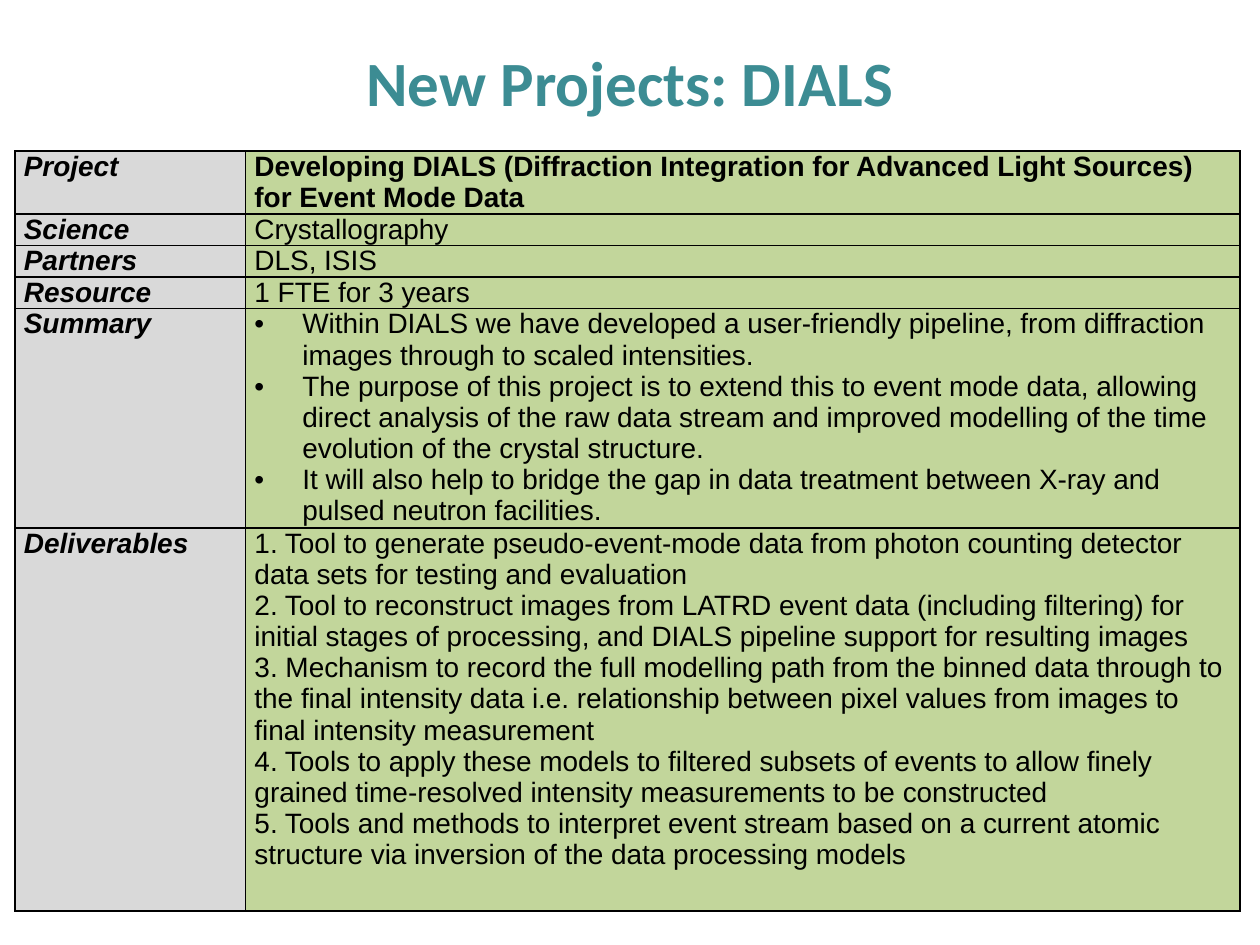
from lxml.etree import SubElement
from pptx import Presentation
from pptx.dml.color import RGBColor
from pptx.enum.text import MSO_ANCHOR, PP_ALIGN
from pptx.oxml.ns import qn
from pptx.util import Inches, Pt

COLORS = {"title": "3C8C93", "label": "D9D9D9", "value": "C2D69B", "ink": "000000"}
COLS = [1.83, 7.89]
ROWS = [
    ("Project", 0.5, ["Developing DIALS (Diffraction Integration for Advanced Light Sources) for Event Mode Data"]),
    ("Science", 0.25, ["Crystallography"]),
    ("Partners", 0.25, ["DLS, ISIS"]),
    ("Resource", 0.25, ["1 FTE for 3 years"]),
    ("Summary", 1.74, [
        "Within DIALS we have developed a user-friendly pipeline, from diffraction images through to scaled intensities.",
        "The purpose of this project is to extend this to event mode data, allowing direct analysis of the raw data stream and improved modelling of the time evolution of the crystal structure.",
        "It will also help to bridge the gap in data treatment between X-ray and pulsed neutron facilities.",
    ]),
    ("Deliverables", 3.04, [
        "1. Tool to generate pseudo-event-mode data from photon counting detector data sets for testing and evaluation",
        "2. Tool to reconstruct images from LATRD event data (including filtering) for initial stages of processing, and DIALS pipeline support for resulting images",
        "3. Mechanism to record the full modelling path from the binned data through to the final intensity data i.e. relationship between pixel values from images to final intensity measurement",
        "4. Tools to apply these models to filtered subsets of events to allow finely grained time-resolved intensity measurements to be constructed",
        "5. Tools and methods to interpret event stream based on a current atomic structure via inversion of the data processing models",
    ]),
]


def add_run(para, text, face, size, color, bold=False, italic=False):
    """Add one styled run to a paragraph."""
    run = para.add_run()
    run.text = text
    font = run.font
    font.name, font.size, font.bold, font.italic = face, Pt(size), bold, italic
    font.color.rgb = RGBColor.from_string(COLORS[color])


def add_bullet(para):
    """Give a paragraph a round bullet with a hanging indent."""
    props = para._p.get_or_add_pPr()
    props.set("marL", str(Inches(0.38)))
    props.set("indent", str(Inches(-0.38)))
    SubElement(props, qn("a:buFont"), typeface="Arial")
    SubElement(props, qn("a:buChar"), char="•")


def add_border(cell):
    """Draw a thin line on all four sides of a cell."""
    props = cell._tc.get_or_add_tcPr()
    for i, side in enumerate(("lnL", "lnR", "lnT", "lnB")):
        line = props.makeelement(qn(f"a:{side}"), {"w": str(Pt(1))})
        props.insert(i, line)
        fill = SubElement(line, qn("a:solidFill"))
        SubElement(fill, qn("a:srgbClr"), val=COLORS["ink"])


def fill_cell(cell, lines, color, bold=False, italic=False, bullet=False):
    """Write lines of text into a filled and bordered cell."""
    cell.fill.solid()
    cell.fill.fore_color.rgb = RGBColor.from_string(COLORS[color])
    add_border(cell)
    cell.margin_left = cell.margin_right = Inches(0.07)
    cell.margin_top = cell.margin_bottom = 0
    frame = cell.text_frame
    for i, text in enumerate(lines):
        para = frame.add_paragraph() if i else frame.paragraphs[0]
        if bullet:
            add_bullet(para)
        para.line_spacing = Pt(17.8)
        add_run(para, text, "Arial", 16, "ink", bold, italic)


def add_title(slide, left, top, width, height):
    """Place the centred slide title."""
    box = slide.shapes.add_textbox(Inches(left), Inches(top), Inches(width), Inches(height))
    frame = box.text_frame
    frame.word_wrap = True
    frame.vertical_anchor = MSO_ANCHOR.MIDDLE
    para = frame.paragraphs[0]
    para.alignment = PP_ALIGN.CENTER
    add_run(para, "New Projects: DIALS", "Calibri", 36, "title", bold=True)


def add_grid(slide, left, top):
    """Place the project table with labels on the left."""
    width, height = sum(COLS), sum(row[1] for row in ROWS)
    frame = slide.shapes.add_table(
        len(ROWS), len(COLS), Inches(left), Inches(top), Inches(width), Inches(height))
    table = frame.table
    table.first_row = table.horz_banding = False
    for col, size in zip(table.columns, COLS):
        col.width = Inches(size)
    for i, (label, size, lines) in enumerate(ROWS):
        table.rows[i].height = Inches(size)
        fill_cell(table.cell(i, 0), [label], "label", bold=True, italic=True)
        fill_cell(table.cell(i, 1), lines, "value",
                  bold=label == "Project", bullet=label == "Summary")


def main():
    """Build the slide and save it."""
    deck = Presentation()
    deck.slide_width, deck.slide_height = Inches(10), Inches(7.5)
    slide = deck.slides.add_slide(deck.slide_layouts[6])
    add_title(slide, 0, 0.02, 10, 1.25)
    add_grid(slide, 0.12, 1.2)
    deck.save("out.pptx")


if __name__ == "__main__":
    main()
